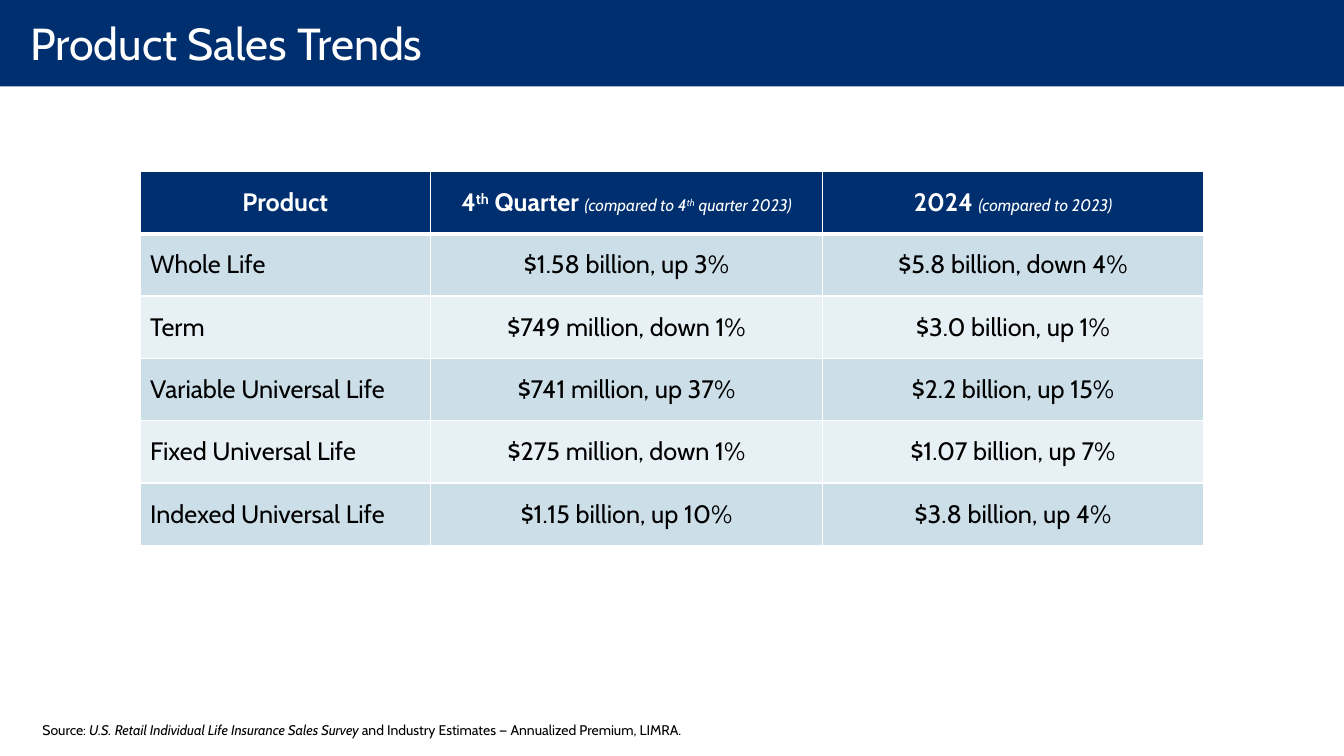
from lxml.etree import SubElement as Sub
from pptx import Presentation
from pptx.dml.color import RGBColor as Rgb
from pptx.enum.shapes import MSO_SHAPE as Shape
from pptx.enum.text import MSO_ANCHOR as Anchor, PP_ALIGN as Align
from pptx.oxml.ns import qn
from pptx.util import Cm, Pt

COLORS = {"navy": "002F70", "white": "FFFFFF", "black": "000000",
          "blue": "CCDFE9", "pale": "E7F0F4"}
FONT = "Cabin"
WIDE, HIGH = 33.87, 19.05

SMALL = {"size": 12, "bold": False, "italic": True}
HEADS = [
    [("Product", {})],
    [("4", {}), ("th", {"base": 30}), (" Quarter ", {}),
     ("(compared to 4", SMALL), ("th", {**SMALL, "base": 30}),
     (" quarter 2023)", SMALL)],
    [("2024 ", {}), ("(compared to 2023)", SMALL)],
]
SALES = [
    ("Whole Life", "$1.58 billion, up 3%", "$5.8 billion, down 4%"),
    ("Term", "$749 million, down 1%", "$3.0 billion, up 1%"),
    ("Variable Universal Life", "$741 million, up 37%", "$2.2 billion, up 15%"),
    ("Fixed Universal Life", "$275 million, down 1%", "$1.07 billion, up 7%"),
    ("Indexed Universal Life", "$1.15 billion, up 10%", "$3.8 billion, up 4%"),
]
SOURCE = [
    ("Source: ", {}),
    ("U.S. Retail Individual Life Insurance Sales Survey ", {"italic": True}),
    ("and Industry Estimates — Annualized Premium, LIMRA.", {}),
]
COLS = (7.32, 9.88, 9.6)


def tint(name):
    return Rgb.from_string(COLORS[name])


def add_run(para, text, size=18, color="black", bold=False, italic=False, base=0):
    """Add a run; base raises it by a percentage of its size."""
    run = para.add_run()
    run.text = text
    font = run.font
    font.name, font.size = FONT, Pt(size)
    font.bold, font.italic = bold, italic
    font.color.rgb = tint(color)
    if base:
        run._r.get_or_add_rPr().set("baseline", str(base * 1000))


def add_text(slide, box, runs, inset, wrap=True, anchor=Anchor.TOP, **style):
    frame = slide.shapes.add_textbox(*map(Cm, box)).text_frame
    frame.word_wrap, frame.vertical_anchor = wrap, anchor
    frame.margin_left, frame.margin_top, frame.margin_right, frame.margin_bottom = map(Cm, inset)
    for text, extra in runs:
        add_run(frame.paragraphs[0], text, **{**style, **extra})


def add_edges(cell, top, bottom):
    """Draw white cell borders with the given top and bottom widths in points."""
    props = cell._tc.get_or_add_tcPr()
    for side, width in (("L", 1), ("R", 1), ("T", top), ("B", bottom)):
        line = Sub(props, qn(f"a:ln{side}"), w=str(Pt(width)))
        Sub(Sub(line, qn("a:solidFill")), qn("a:srgbClr"), val=COLORS["white"])


def fill_cell(cell, runs, fill, align, top=1, bottom=1, **style):
    add_edges(cell, top, bottom)
    cell.fill.solid()
    cell.fill.fore_color.rgb = tint(fill)
    cell.vertical_anchor = Anchor.MIDDLE
    para = cell.text_frame.paragraphs[0]
    para.alignment = align
    for text, extra in runs:
        add_run(para, text, **{**style, **extra})


def add_header(slide, box):
    left, top, width, height = box
    bar = slide.shapes.add_shape(Shape.RECTANGLE, *map(Cm, box))
    bar.shadow.inherit = False
    bar.fill.solid()
    bar.fill.fore_color.rgb = tint("navy")
    bar.line.fill.background()
    add_text(slide, (left, top - 0.15, width, height + 0.28),
             [("Product Sales Trends", {})], (0.76, 0, 0.51, 0),
             wrap=False, anchor=Anchor.MIDDLE, size=32, color="white")


def add_sales(slide, box):
    rows = len(SALES) + 1
    table = slide.shapes.add_table(rows, len(COLS), *map(Cm, box)).table
    for col, width in zip(table.columns, COLS):
        col.width = Cm(width)
    for row in table.rows:
        row.height = Cm(box[3] / rows)
    for c, runs in enumerate(HEADS):
        fill_cell(table.cell(0, c), runs, "navy", Align.CENTER,
                  bottom=3, color="white", bold=True)
    for r, sale in enumerate(SALES, 1):
        for c, text in enumerate(sale):
            fill_cell(table.cell(r, c), [(text, {})],
                      "blue" if r % 2 else "pale",
                      Align.CENTER if c else Align.LEFT,
                      top=3 if r == 1 else 1)


def add_source(slide, box):
    add_text(slide, box, SOURCE, (0.33, 0.13, 0.25, 0.13), size=10)


def main():
    deck = Presentation()
    deck.slide_width, deck.slide_height = Cm(WIDE), Cm(HIGH)
    slide = deck.slides.add_slide(deck.slide_layouts[6])
    add_header(slide, (0, 0, WIDE, 2.18))
    add_sales(slide, (3.53, 4.32, sum(COLS), 9.42))
    add_source(slide, (0.74, 18.06, 25.1, 0.69))
    deck.save("out.pptx")


if __name__ == "__main__":
    main()
